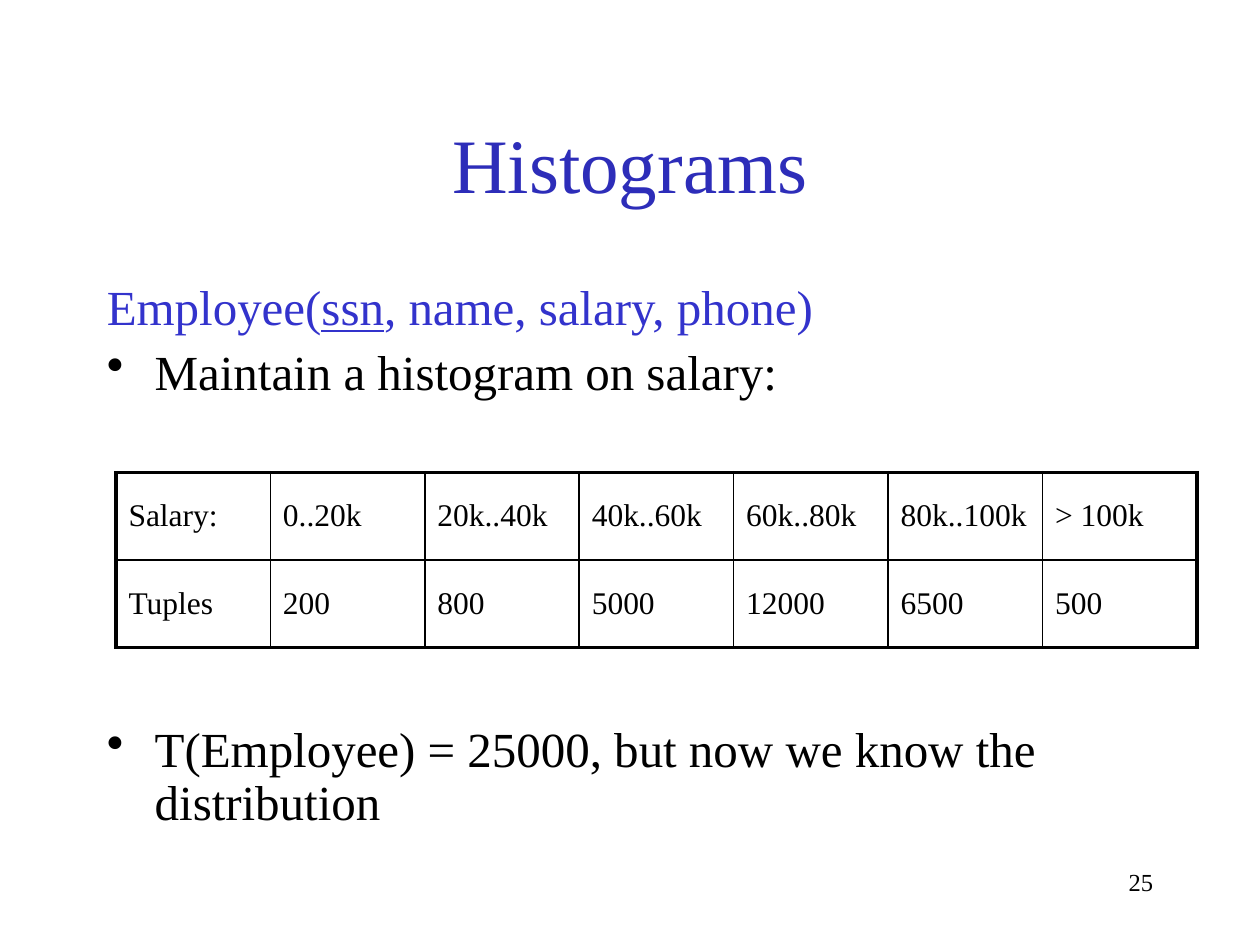
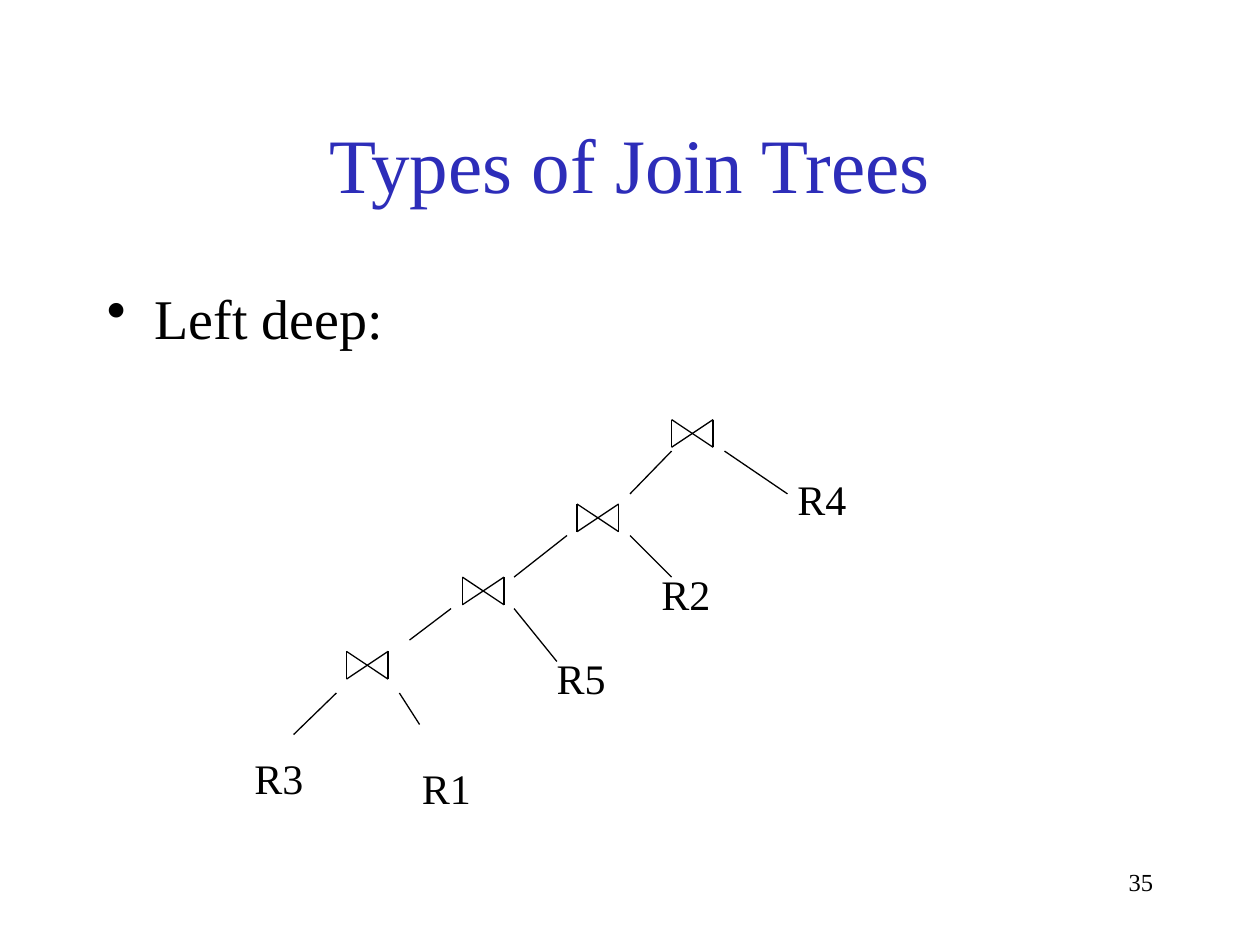
from lxml import etree
from pptx import Presentation
from pptx import util as u
from pptx.dml import color
from pptx.enum import shapes, text
from pptx.oxml import ns

FONT = "Times New Roman"
TITLE_BLUE, SCHEMA_BLUE, BLACK = "2D2DB9", "3333CC", "000000"
TITLE_BOX = (0.75, 0.67, 8.5, 1.25)
BODY_BOX = (0.75, 2.2, 8.5, 4.47)
NUMBER_BOX = (7.17, 6.83, 2.08, 0.5)
LABEL_SIZE = (0.59, 0.5)
JOIN_W, JOIN_H = 0.33, 0.22
THIN, THICK = 1, 2.25

HISTOGRAM = [
    ["Salary:", "0..20k", "20k..40k", "40k..60k", "60k..80k", "80k..100k", "> 100k"],
    ["Tuples", "200", "800", "5000", "12000", "6500", "500"],
]
JOINS = [(5.33, 3.33), (4.58, 4), (3.67, 4.58), (2.75, 5.17)]
BRANCHES = [
    (5.33, 3.58, 5, 3.92), (5.75, 3.58, 6.25, 3.92),
    (4.5, 4.25, 4.08, 4.58), (5, 4.25, 5.33, 4.58),
    (3.58, 4.83, 3.25, 5.08), (4.08, 4.83, 4.42, 5.25),
    (2.67, 5.5, 2.33, 5.83), (3.17, 5.5, 3.33, 5.75),
]
RELATIONS = {
    "R3": (1.92, 5.92), "R1": (3.25, 6), "R5": (4.32, 5.13),
    "R2": (5.15, 4.46), "R4": (6.23, 3.71),
}


def rgb(value):
    return color.RGBColor.from_string(value)


def inches(values):
    return [u.Inches(v) for v in values]


def set_attrs(target, **values):
    for name, value in values.items():
        setattr(target, name, value)


def add_run(p, content, size, colour=BLACK, **font):
    r = p.add_run()
    r.text = content
    set_attrs(r.font, name=FONT, size=u.Pt(size), **font)
    r.font.color.rgb = rgb(colour)


def add_box(s, box, wrap=True):
    tf = s.shapes.add_textbox(*inches(box)).text_frame
    tf.word_wrap = wrap
    return tf


def add_title_slide(prs, title, number):
    s = prs.slides.add_slide(prs.slide_layouts[5])
    sp = s.shapes.title
    set_attrs(sp, **dict(zip(("left", "top", "width", "height"), inches(TITLE_BOX))))
    sp.text_frame.vertical_anchor = text.MSO_ANCHOR.MIDDLE
    p = sp.text_frame.paragraphs[0]
    p.alignment = text.PP_ALIGN.CENTER
    add_run(p, title, 44, TITLE_BLUE)
    p = add_box(s, NUMBER_BOX).paragraphs[0]
    p.alignment = text.PP_ALIGN.RIGHT
    add_run(p, number, 14)
    return s


def format_hanging(p, bullet=True, **spacing):
    pPr = p._p.get_or_add_pPr()
    pPr.set("marL", str(u.Inches(0.38)))
    pPr.set("indent", str(u.Inches(-0.38)))
    if bullet:
        etree.SubElement(pPr, ns.qn("a:buChar"), char="•")
    else:
        etree.SubElement(pPr, ns.qn("a:buNone"))
    set_attrs(p, **spacing)


def set_border(cell, side, width):
    tcPr = cell._tc.get_or_add_tcPr()
    ln = etree.SubElement(tcPr, ns.qn("a:ln" + side), w=str(u.Pt(width)))
    fill = etree.SubElement(ln, ns.qn("a:solidFill"))
    etree.SubElement(fill, ns.qn("a:srgbClr"), val=BLACK)


def add_grid(s, rows, box):
    n_rows, n_cols = len(rows), len(rows[0])
    table = s.shapes.add_table(n_rows, n_cols, *inches(box)).table
    set_attrs(table, first_row=False, horz_banding=False)
    for i, row in enumerate(rows):
        for j, value in enumerate(row):
            cell = table.cell(i, j)
            outer = {"L": j == 0, "R": j == n_cols - 1, "T": i == 0, "B": i == n_rows - 1}
            for side, is_outer in outer.items():
                set_border(cell, side, THICK if is_outer else THIN)
            cell.fill.background()
            cell.vertical_anchor = text.MSO_ANCHOR.MIDDLE
            add_run(cell.text_frame.paragraphs[0], value, 18)


def add_line(parent, *ends):
    line = parent.shapes.add_connector(shapes.MSO_CONNECTOR.STRAIGHT, *inches(ends))
    line.line.width = u.Pt(0.75)
    line.line.color.rgb = rgb(BLACK)
    etree.SubElement(line._element.spPr, ns.qn("a:effectLst"))


def add_join(s, left, top):
    group = s.shapes.add_group_shape()
    right, bottom = left + JOIN_W, top + JOIN_H
    corners = [(left, top), (right, bottom), (right, top), (left, bottom)]
    for start, end in zip(corners, corners[1:] + corners[:1]):
        add_line(group, *start, *end)


def build_histograms(prs):
    s = add_title_slide(prs, "Histograms", "25")
    tf = add_box(s, BODY_BOX)
    p = tf.paragraphs[0]
    format_hanging(p, bullet=False, line_spacing=0.9)
    add_run(p, "Employee(", 28, SCHEMA_BLUE)
    add_run(p, "ssn", 28, SCHEMA_BLUE, underline=True)
    add_run(p, ", name, salary, phone)", 28, SCHEMA_BLUE)
    for content, gap in (
        ("Maintain a histogram on salary:", 6.5),
        ("T(Employee) = 25000, but now we know the distribution", 185.5),
    ):
        p = tf.add_paragraph()
        format_hanging(p, line_spacing=0.9, space_before=u.Pt(gap))
        add_run(p, content, 28)
    add_grid(s, HISTOGRAM, (0.92, 3.75, 8.58, 1.39))


def build_join_trees(prs):
    s = add_title_slide(prs, "Types of Join Trees", "35")
    p = add_box(s, BODY_BOX).paragraphs[0]
    format_hanging(p)
    add_run(p, "Left deep:", 32)
    for join in JOINS:
        add_join(s, *join)
    for name, corner in RELATIONS.items():
        add_run(add_box(s, corner + LABEL_SIZE, wrap=False).paragraphs[0], name, 24)
    for branch in BRANCHES:
        add_line(s, *branch)


def main():
    prs = Presentation()
    set_attrs(prs, slide_width=u.Inches(10), slide_height=u.Inches(7.5))
    build_histograms(prs)
    build_join_trees(prs)
    prs.save("out.pptx")


if __name__ == "__main__":
    main()
